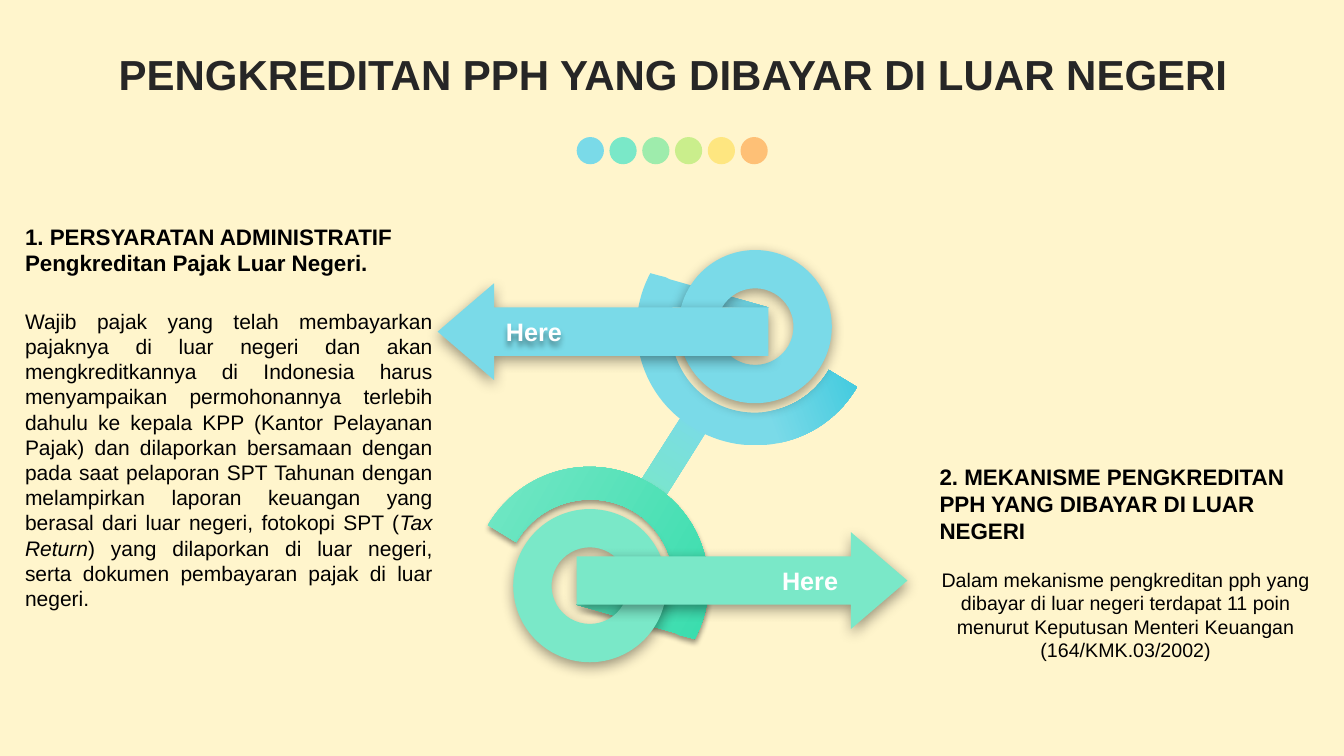
import math

import lxml.etree
import pptx
import pptx.dml.color
import pptx.enum.shapes
import pptx.enum.text
import pptx.oxml
import pptx.oxml.ns
import pptx.util

Inches = pptx.util.Inches
Shape = pptx.enum.shapes.MSO_SHAPE
Align = pptx.enum.text.PP_ALIGN
Anchor = pptx.enum.text.MSO_ANCHOR
qn = pptx.oxml.ns.qn

FONT = "Arial"
BLUE, GREEN = "7ADAE8", "7AE8C8"
DOT_COLORS = [BLUE, GREEN, "9EECAC", "CAEE8C", "FEE680", "FEC076"]

# Outline of the arc around the upper ring, in inches from the ring's centre.
# One point is a straight line's end, three points are a Bezier curve.
ARC_STEPS = [
    [(-1.04, -0.53)],
    [(-0.97, -0.51), (-0.93, -0.5), (-0.89, -0.49)],
    [(-0.85, -0.47)],
    [(0.13, -0.19)],
    [(-0.82, -0.19)],
    [(-0.84, -0.11)],
    [(-0.87, 0.23), (-0.72, 0.58), (-0.41, 0.75)],
    [(-0.01, 0.97), (0.5, 0.83), (0.73, 0.43)],
    [(1.01, 0.6)],
    [(0.69, 1.15), (-0.01, 1.34), (-0.57, 1.03)],
    [(-1.13, 0.73), (-1.34, 0.03), (-1.04, -0.53)],
]


def rgb(color):
    return pptx.dml.color.RGBColor.from_string(color)


def drawing_xml(xml):
    return pptx.oxml.parse_xml(xml.replace(">", f" {pptx.oxml.ns.nsdecls('a')}>", 1))


def paint(shape, color):
    shape.fill.solid()
    shape.fill.fore_color.rgb = rgb(color)
    shape.line.fill.background()
    shape.shadow.inherit = False


def paint_gradient(shape, stops, angle):
    """Fill with (percent, colour) stops; the angle runs clockwise in degrees."""
    paint(shape, stops[0][1])
    stop_xml = "".join(
        f'<a:gs pos="{percent * 1000}"><a:srgbClr val="{color}"/></a:gs>'
        for percent, color in stops)
    gradient = drawing_xml(
        f'<a:gradFill rotWithShape="1"><a:gsLst>{stop_xml}</a:gsLst>'
        f'<a:lin ang="{angle * 60000}" scaled="0"/></a:gradFill>')
    properties = shape._element.spPr
    properties.replace(properties.find(qn("a:solidFill")), gradient)


def cast_shadow(shape, blur):
    shape.shadow.inherit = False
    shape._element.spPr.find(qn("a:effectLst")).append(drawing_xml(
        f'<a:outerShdw blurRad="{pptx.util.Pt(blur)}" dist="{pptx.util.Pt(3)}" '
        'dir="5400000" algn="t" rotWithShape="0">'
        '<a:srgbClr val="000000"><a:alpha val="40000"/></a:srgbClr></a:outerShdw>'))


def add_preset(slide, kind, left, top, width, height):
    return slide.shapes.add_shape(
        kind, Inches(left), Inches(top), Inches(width), Inches(height))


def add_text(slide, box, parts, size, color="000000", bold=False,
             align=Align.LEFT, anchor=Anchor.TOP):
    """Add one paragraph; parts are (text, italic) pairs."""
    textbox = slide.shapes.add_textbox(*map(Inches, box))
    frame = textbox.text_frame
    frame.word_wrap = True
    frame.vertical_anchor = anchor
    paragraph = frame.paragraphs[0]
    paragraph.alignment = align
    for text, italic in parts:
        run = paragraph.add_run()
        run.text = text
        run.font.name = FONT
        run.font.size = pptx.util.Pt(size)
        run.font.bold = bold
        run.font.italic = italic
        run.font.color.rgb = rgb(color)
    return textbox


def add_title(slide, left, top, width, height):
    title = slide.shapes.title
    title.left, title.top, title.width, title.height = map(
        Inches, (left, top, width, height))
    frame = title.text_frame
    frame.text = "PENGKREDITAN PPH YANG DIBAYAR DI LUAR NEGERI"
    frame.word_wrap = True
    frame.vertical_anchor = Anchor.MIDDLE
    paragraph = frame.paragraphs[0]
    paragraph.alignment = Align.CENTER
    paragraph.line_spacing = 0.9
    font = paragraph.runs[0].font
    font.name, font.size, font.bold = FONT, pptx.util.Pt(30), True
    font.color.rgb = rgb("262626")


def add_dots(slide, left, top, size=0.27, pitch=0.325):
    for index, color in enumerate(DOT_COLORS):
        dot = add_preset(slide, Shape.OVAL, left + index * pitch, top, size, size)
        paint(dot, color)


def add_section(slide, left, top, heading_box, body_box, heading, body,
                body_size, body_align):
    """Place heading and body; their boxes are relative to left and top."""
    for (dx, dy, width, height), parts, size, bold, align in (
            (body_box, body, body_size, False, body_align),
            (heading_box, [(heading, False)], 16, True, Align.LEFT)):
        add_text(slide, (left + dx, top + dy, width, height), parts, size,
                 bold=bold, align=align)


def add_arc(slide, x, y, sign, box, rotation):
    """Draw the curved outline about x, y; the box, before rotation, is relative to it."""
    left, top, width, height = box
    middle_x, middle_y = left + width / 2, top + height / 2
    cos, sin = math.cos(math.radians(rotation)), math.sin(math.radians(rotation))

    def place(point):
        dx, dy = sign * point[0] - middle_x, sign * point[1] - middle_y
        return (Inches(dx * cos + dy * sin + width / 2),
                Inches(dy * cos - dx * sin + height / 2))

    steps = [[place(point) for point in step] for step in ARC_STEPS]
    builder = slide.shapes.build_freeform(*steps[0][0], scale=1.0)
    builder.add_line_segments([step[-1] for step in steps[1:]], close=True)
    arc = builder.convert_to_shape()
    arc.left, arc.top, arc.width, arc.height = map(
        Inches, (x + left, y + top, width, height))
    arc.rotation = rotation

    outline = arc._element.spPr.find(".//" + qn("a:path"))
    outline.set("w", str(Inches(width)))
    outline.set("h", str(Inches(height)))
    for segment, step in zip(list(outline), steps):
        tag = segment.tag if len(step) == 1 else qn("a:cubicBezTo")
        replacement = lxml.etree.Element(tag)
        for px, py in step:
            lxml.etree.SubElement(replacement, qn("a:pt"), x=str(px), y=str(py))
        outline.replace(segment, replacement)
    return arc


def add_hook(slide, x, y, turned, color, stops, angle, arc_box, arc_rotation):
    """Add arc, ring and arrow about a centre; turned means by half a turn."""
    sign = -1 if turned else 1
    arc = add_arc(slide, x, y, sign, arc_box, arc_rotation)
    paint_gradient(arc, stops, angle)
    if turned:
        cast_shadow(arc, 4)

    ring = add_preset(slide, Shape.DONUT, x - 0.76, y - 0.76, 1.52, 1.52)
    length, thickness = 3.28, 0.96
    middle_x = x + sign * (0.13 - length / 2)
    middle_y = y + sign * 0.05
    arrow = add_preset(slide, Shape.RIGHT_ARROW, middle_x - length / 2,
                       middle_y - thickness / 2, length, thickness)
    arrow.adjustments[0], arrow.adjustments[1] = 0.5, 0.583
    ring.rotation = arrow.rotation = 0 if turned else 180
    for part in (ring, arrow):
        paint(part, color)
        cast_shadow(part, 10)

    label_x = middle_x + (-1.34 if turned else -1.06)
    label = add_text(slide, (label_x, middle_y - 0.2, 2.39, 0.4), [("Here", False)],
                     18, "FFFFFF", True, Align.RIGHT if turned else Align.LEFT,
                     Anchor.MIDDLE)
    if not turned:
        cast_shadow(label, 4)


def add_diagram(slide, left, top):
    link = add_preset(slide, Shape.FLOWCHART_PROCESS, left + 2.18, top + 1.64, 0.29, 0.86)
    link.rotation = 32.3
    paint_gradient(link, [(0, BLUE), (100, GREEN)], 90)
    add_hook(slide, left + 1.51, top + 3.33, True, GREEN,
             [(0, GREEN), (100, "2FDBA9")], 0, (-0.94, -1.12, 2.33, 1.41), 30)
    add_hook(slide, left + 3.15, top + 0.76, False, BLUE,
             [(0, BLUE), (50, BLUE), (100, "2FC5DB")], 340,
             (-1.17, -0.53, 2.18, 1.71), 0)


def main():
    deck = pptx.Presentation()
    deck.slide_width, deck.slide_height = Inches(13.33), Inches(7.5)
    slide = deck.slides.add_slide(deck.slide_layouts[5])
    slide.background.fill.solid()
    slide.background.fill.fore_color.rgb = rgb("FFF5CC")
    add_title(slide, 0.35, 0.37, 12.66, 0.79)
    add_dots(slide, 5.72, 1.36)
    add_section(
        slide, 0.15, 2.16, (0, 0, 4.94, 0.91), (0, 0.85, 4.24, 3.33),
        "1. PERSYARATAN ADMINISTRATIF Pengkreditan Pajak Luar Negeri.",
        [("Wajib pajak yang telah membayarkan pajaknya di luar negeri dan akan mengkreditkannya di Indonesia harus menyampaikan permohonannya terlebih dahulu ke kepala KPP (Kantor Pelayanan Pajak) dan dilaporkan bersamaan dengan pada saat pelaporan SPT Tahunan dengan melampirkan laporan keuangan yang berasal dari luar negeri, fotokopi SPT (", False),
         ("Tax Return", True),
         (") yang dilaporkan di luar negeri, serta dokumen pembayaran pajak di luar negeri.", False)],
        15, Align.JUSTIFY)
    add_section(
        slide, 9.11, 4.55, (0.11, 0, 4.11, 1.18), (0, 1.03, 4.11, 1.51),
        "2. MEKANISME PENGKREDITAN PPH YANG DIBAYAR DI LUAR NEGERI",
        [("Dalam mekanisme pengkreditan pph yang dibayar di luar negeri terdapat 11 poin menurut Keputusan Menteri Keuangan (164/KMK.03/2002)", False)],
        14, Align.CENTER)
    add_diagram(slide, 4.34, 2.48)
    deck.save("out.pptx")


if __name__ == "__main__":
    main()
